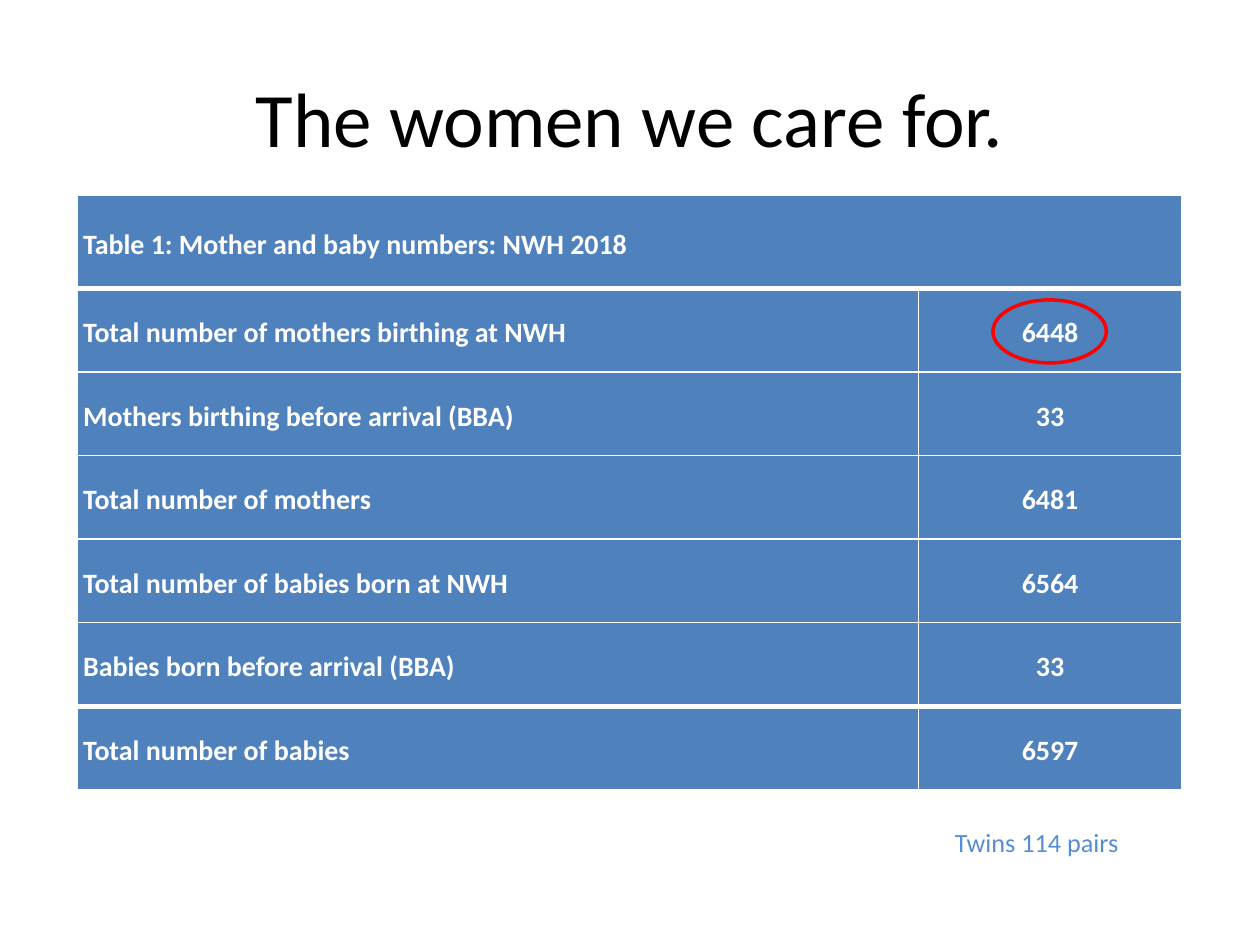
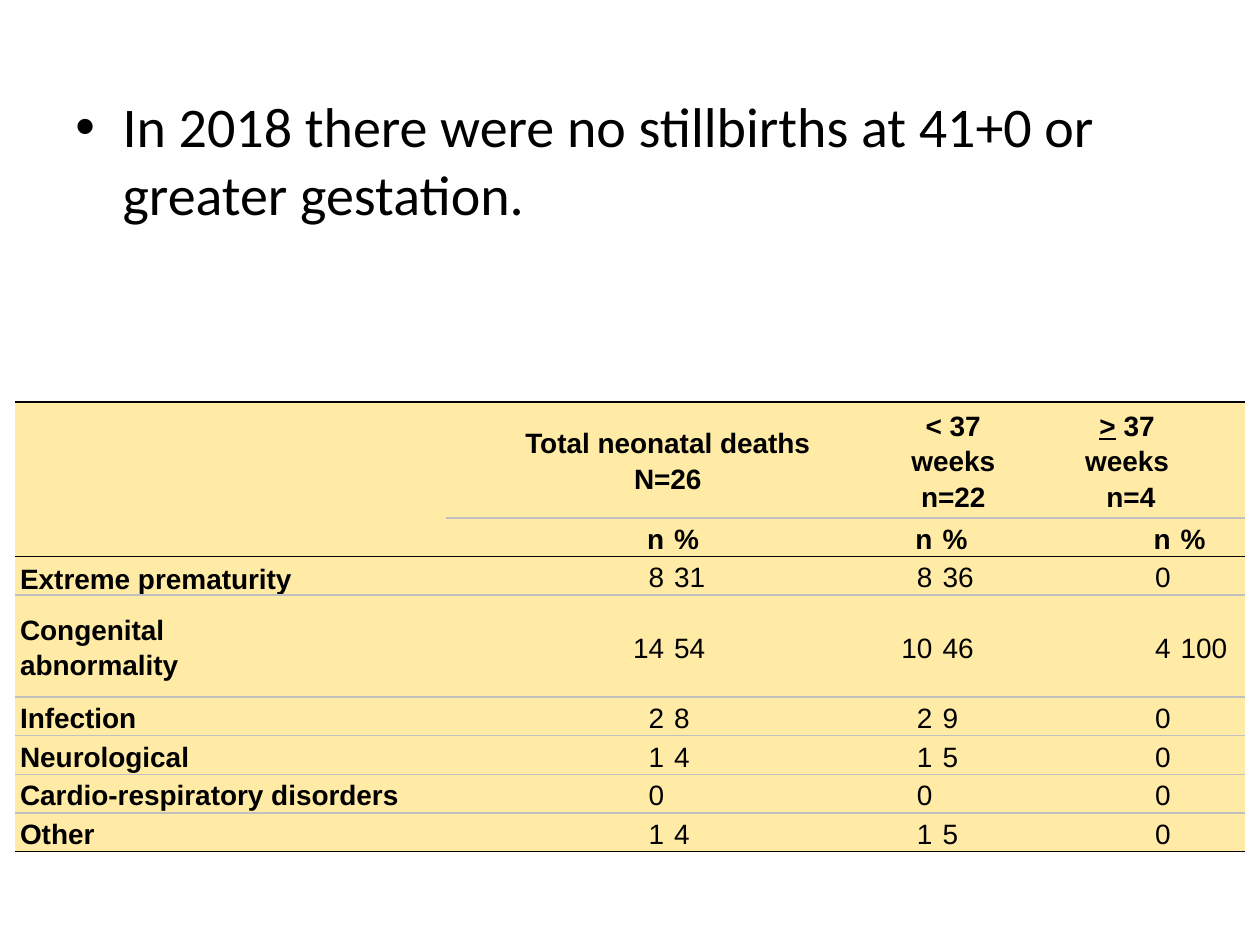
import pptx
import pptx.util
import pptx.dml.color
import pptx.enum.text
import pptx.enum.shapes
import pptx.oxml.ns
import lxml.etree
from collections import namedtuple
from dataclasses import dataclass

Pt = pptx.util.Pt
qn = pptx.oxml.ns.qn
Align = pptx.enum.text.PP_ALIGN
Anchor = pptx.enum.text.MSO_ANCHOR
Box = namedtuple("Box", "left top width height")


@dataclass(frozen=True)
class Theme:
    font: str = "Calibri"
    deaths_font: str = "Arial"
    black: str = "000000"
    white: str = "FFFFFF"
    blue: str = "4F81BD"
    note_blue: str = "558ED5"
    red: str = "FF0000"
    cream: str = "FFEBA6"
    grey: str = "C0C0C0"
    title_size: int = 44
    body_size: int = 32
    table_size: int = 16
    note_size: int = 15
    table_leading: float = 1.15
    plain_table: str = "{2D5ABB26-0587-4C30-8999-92F81FD0307C}"


THEME = Theme()
SLIDE = Box(0, 0, 720, 540)


def rgb(colour):
    return pptx.dml.color.RGBColor.from_string(colour)


def points(values):
    return [Pt(value) for value in values]


def write(frame, text, size, color=THEME.black, font=THEME.font, bold=False,
          align=Align.LEFT, leading=None, before=None, underlined=""):
    for index, line in enumerate(text.split("\n")):
        paragraph = frame.paragraphs[0] if index == 0 else frame.add_paragraph()
        paragraph.alignment = align
        paragraph.line_spacing = leading
        if before is not None:
            paragraph.space_before = Pt(before)
        if not line:
            lxml.etree.SubElement(paragraph._p, qn("a:endParaRPr"), sz=str(size * 100))
            continue
        marked = underlined if underlined and line.startswith(underlined) else ""
        for piece in filter(None, (marked, line[len(marked):])):
            run = paragraph.add_run()
            run.text = piece
            run.font.size = Pt(size)
            run.font.name = font
            run.font.bold = bold
            run.font.color.rgb = rgb(color)
            if marked and piece == marked:
                run.font.underline = True


def add_text(slide, box, text, anchor=Anchor.TOP, wrap=True, **format):
    frame = slide.shapes.add_textbox(*points(box)).text_frame
    frame.word_wrap = wrap
    frame.vertical_anchor = anchor
    write(frame, text, **format)
    return frame


def add_grid(slide, box, widths, heights):
    frame = slide.shapes.add_table(len(heights), len(widths), *points(box))
    grid = frame.table
    grid.first_row = grid.horz_banding = False
    grid._tbl.tblPr.find(qn("a:tableStyleId")).text = THEME.plain_table
    for column, width in zip(grid.columns, widths):
        column.width = Pt(width)
    for row, height in zip(grid.rows, heights):
        row.height = Pt(height)
    return grid


def fill_cell(cell, text, fill, inset, borders, anchor=Anchor.MIDDLE, **format):
    cell.margin_left = cell.margin_right = Pt(inset)
    cell.margin_top = cell.margin_bottom = 0
    cell.vertical_anchor = anchor
    properties = cell._tc.get_or_add_tcPr()
    for side in "LRTB":
        color, weight = borders.get(side, (None, 0))
        line = lxml.etree.SubElement(properties, qn(f"a:ln{side}"), w=str(Pt(weight)))
        if color:
            solid = lxml.etree.SubElement(line, qn("a:solidFill"))
            lxml.etree.SubElement(solid, qn("a:srgbClr"), val=color)
        else:
            lxml.etree.SubElement(line, qn("a:noFill"))
    cell.fill.solid()
    cell.fill.fore_color.rgb = rgb(fill)
    write(cell.text_frame, text, size=THEME.table_size,
          leading=THEME.table_leading, **format)


def mother_table(slide, box):
    heading = "Table 1: Mother and baby numbers: NWH 2018"
    counts = [
        ("Total number of mothers birthing at NWH", "6448"),
        ("Mothers birthing before arrival (BBA)", "33"),
        ("Total number of mothers", "6481"),
        ("Total number of babies born at NWH", "6564"),
        ("Babies born before arrival (BBA)", "33"),
        ("Total number of babies", "6597"),
    ]
    heading_height, count_width = 53.3, 150.5
    row_height = (box.height - heading_height) / len(counts)
    grid = add_grid(slide, box, [box.width - count_width, count_width],
                    [heading_height] + [row_height] * len(counts))
    grid.cell(0, 0).merge(grid.cell(0, 1))
    weights = [1, 3] + [1] * (len(counts) - 2) + [3, 1]
    for row, texts in enumerate([(heading,)] + counts):
        borders = {"L": (THEME.white, 1), "R": (THEME.white, 1),
                   "T": (THEME.white, weights[row]),
                   "B": (THEME.white, weights[row + 1])}
        for column, text in enumerate(texts):
            fill_cell(grid.cell(row, column), text, THEME.blue, 3.6, borders,
                      color=THEME.white, bold=True,
                      align=Align.CENTER if column else Align.LEFT)


def total_ring(slide, box):
    ring = slide.shapes.add_shape(pptx.enum.shapes.MSO_SHAPE.OVAL, *points(box))
    ring.shadow.inherit = False
    ring.fill.background()
    ring.line.color.rgb = rgb(THEME.red)
    ring.line.width = Pt(2)


def deaths_table(slide, box):
    widths = [175.7, 70.6, 95.8, 31.7, 126, 27.4, 45.4, 62.6, 28.1, 39.6]
    heights = [58.3, 19.4, 19.4, 58.3, 19.4, 19.4, 19.4, 19.4]
    group_spans = [2, 3, 2, 3]
    measure_spans = [2, 2, 1, 1, 1, 2, 1]
    cause_spans = [3, 1, 1, 1, 2, 1, 1]
    narrow_cause_spans = [1, 3, 1, 1, 2, 1, 1]
    rows = [
        (group_spans, ["", "Total neonatal deaths\nN=26", "< 37 weeks n=22",
                       "> 37 \nweeks \nn=4"]),
        (measure_spans, ["", "n", "%", "n", "%", "n", "%"]),
        (cause_spans, ["Extreme prematurity", "8", "31", "8", "36", "0", ""]),
        (narrow_cause_spans, ["Congenital abnormality", "14", "54", "10", "46", "4", "100"]),
        (cause_spans, ["Infection", "2", "8", "2", "9", "0", ""]),
        (cause_spans, ["Neurological", "1", "4", "1", "5", "0", ""]),
        (cause_spans, ["Cardio-respiratory disorders", "0", "", "0", "", "0", ""]),
        (cause_spans, ["Other", "1", "4", "1", "5", "0", ""]),
    ]
    header_rows = 2
    black_rules = {0, header_rows, len(rows)}
    grid = add_grid(slide, box, widths, heights)
    grid.cell(0, 0).merge(grid.cell(header_rows - 1, group_spans[0] - 1))

    def rule(index):
        return (THEME.black if index in black_rules else THEME.grey, 1)

    for row, (spans, texts) in enumerate(rows):
        column = 0
        for position, (span, text) in enumerate(zip(spans, texts)):
            cell = grid.cell(row, column)
            if span > 1 and not (cell.is_merge_origin or cell.is_spanned):
                cell.merge(grid.cell(row, column + span - 1))
            column += span
            if cell.is_spanned:
                continue
            if row == 0:
                align = Align.CENTER
            elif position % 2:
                align = Align.RIGHT
            else:
                align = Align.LEFT
            fill_cell(cell, text, THEME.cream, 2.9,
                      {"T": rule(row), "B": rule(row + cell.span_height)},
                      anchor=Anchor.BOTTOM if row == 2 and position == 0 else Anchor.MIDDLE,
                      font=THEME.deaths_font, align=align,
                      bold=row < header_rows or position == 0,
                      underlined=">" if row == 0 else "")


def bullet_body(slide, box, text):
    frame = add_text(slide, box, text, size=THEME.body_size, before=6.4)
    properties = frame.paragraphs[0]._p.get_or_add_pPr()
    properties.set("marL", str(Pt(27)))
    properties.set("indent", str(Pt(-27)))
    lxml.etree.SubElement(properties, qn("a:buFont"), typeface=THEME.deaths_font)
    lxml.etree.SubElement(properties, qn("a:buChar"), char="•")


def women_slide(slide, page):
    margin = page.left + 36
    add_text(slide, Box(margin, page.top + 21.6, page.width - 72, 90),
             "The women we care for.", anchor=Anchor.MIDDLE,
             size=THEME.title_size, align=Align.CENTER)
    mother_table(slide, Box(page.left + 43.9, page.top + 111.6, 631.4, 339.8))
    add_text(slide, Box(page.left + 538.6, page.top + 468.7, 108.7, 25.2),
             "Twins 114 pairs", wrap=False, size=THEME.note_size,
             color=THEME.note_blue)
    total_ring(slide, Box(page.left + 567.4, page.top + 171.4, 64.8, 36))


def deaths_slide(slide, page):
    bullet_body(slide, Box(page.left + 36, page.top + 49, page.width - 72, 433.4),
                "In 2018 there were no stillbirths at 41+0 or greater gestation.")
    deaths_table(slide, Box(page.left + 8.6, page.top + 229.7, 702.7, 257))


def main():
    deck = pptx.Presentation()
    deck.slide_width, deck.slide_height = points((SLIDE.width, SLIDE.height))
    for build in (women_slide, deaths_slide):
        build(deck.slides.add_slide(deck.slide_layouts[6]), SLIDE)
    deck.save("out.pptx")


if __name__ == "__main__":
    main()
